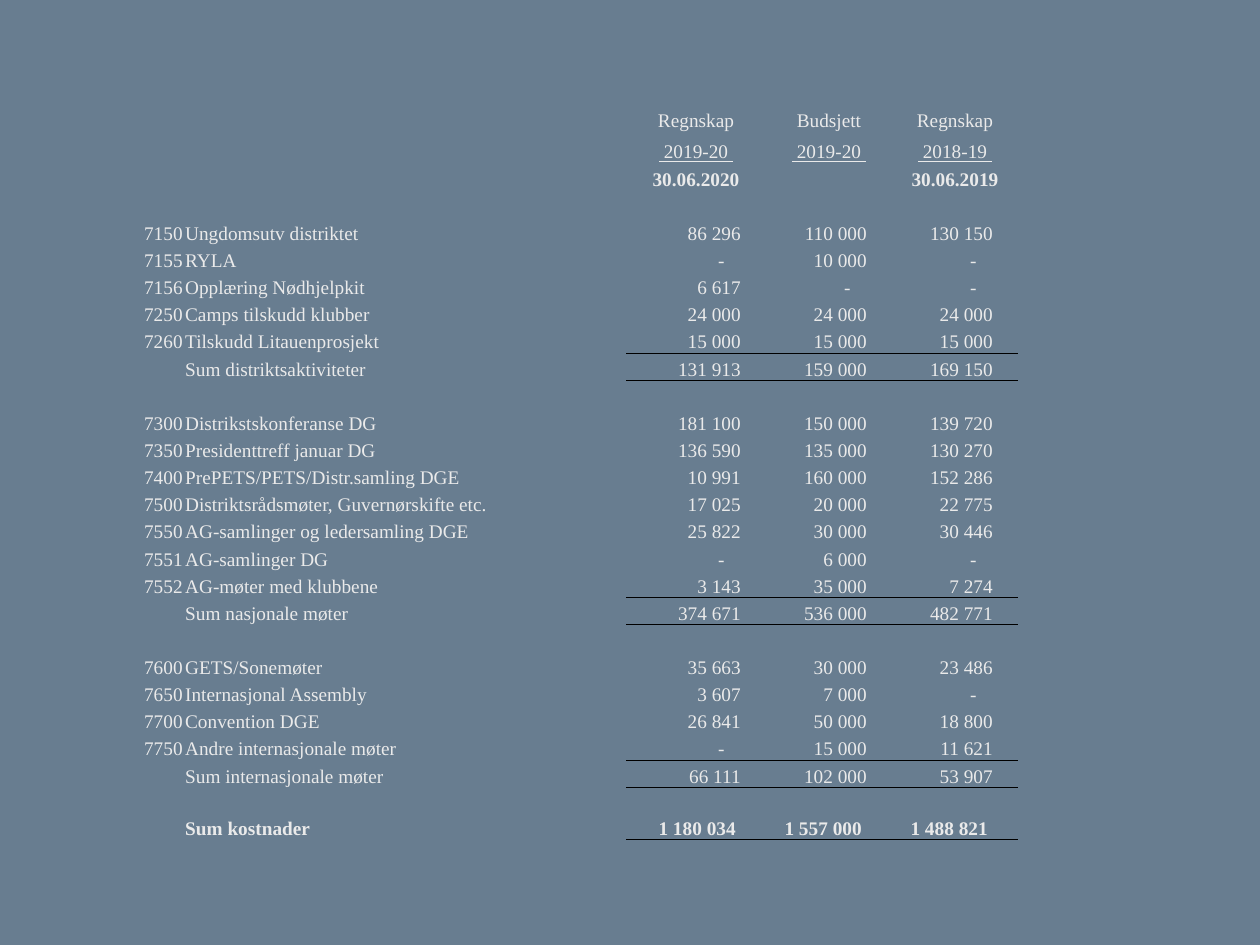
from typing import NamedTuple

from lxml import etree
from pptx import Presentation
from pptx.dml.color import RGBColor
from pptx.enum import text
from pptx.oxml.ns import qn
from pptx.util import Inches, Pt

BACKGROUND = RGBColor(0x68, 0x7D, 0x90)
INK = RGBColor(0xEA, 0xEA, 0xEA)
RULE = RGBColor(0, 0, 0)
FONT = "Times New Roman"
LEFT, CENTER, RIGHT = text.PP_ALIGN.LEFT, text.PP_ALIGN.CENTER, text.PP_ALIGN.RIGHT

COL_WIDTHS = [0.48, 2.87, 0.64, 1.11, 1, 1]
FIRST_VALUE_COL = 3
TABLE_HEIGHT, PERIOD_HEIGHT, TOTAL_HEIGHT = 5.84, 0.25, 0.2
PERIOD_ROW = 1
PAD = 0.01
NUMBER_INDENT, DASH_INDENT, TOTAL_INDENT = 0.2, 0.33, 0.24


class Entry(NamedTuple):
    account: str
    label: str
    values: tuple[str, str, str]


class Section(NamedTuple):
    entries: list[Entry]
    total: Entry


HEADINGS = [
    (("Regnskap", "Budsjett", "Regnskap"), {}),
    ((" 2019-20 ", " 2019-20 ", " 2018-19 "), {"underline": True}),
    (("30.06.2020", "", "30.06.2019"), {"bold": True}),
]
SECTIONS = [
    Section([
        Entry("7150", "Ungdomsutv distriktet", ("86 296", "110 000", "130 150")),
        Entry("7155", "RYLA", ("-", "10 000", "-")),
        Entry("7156", "Opplæring Nødhjelpkit", ("6 617", "-", "-")),
        Entry("7250", "Camps tilskudd klubber", ("24 000", "24 000", "24 000")),
        Entry("7260", "Tilskudd Litauenprosjekt", ("15 000", "15 000", "15 000")),
    ], Entry("", "Sum distriktsaktiviteter", ("131 913", "159 000", "169 150"))),
    Section([
        Entry("7300", "Distrikstskonferanse DG", ("181 100", "150 000", "139 720")),
        Entry("7350", "Presidenttreff januar DG", ("136 590", "135 000", "130 270")),
        Entry("7400", "PrePETS/PETS/Distr.samling DGE", ("10 991", "160 000", "152 286")),
        Entry("7500", "Distriktsrådsmøter, Guvernørskifte etc.", ("17 025", "20 000", "22 775")),
        Entry("7550", "AG-samlinger og ledersamling DGE", ("25 822", "30 000", "30 446")),
        Entry("7551", "AG-samlinger DG", ("-", "6 000", "-")),
        Entry("7552", "AG-møter med klubbene", ("3 143", "35 000", "7 274")),
    ], Entry("", "Sum nasjonale møter", ("374 671", "536 000", "482 771"))),
    Section([
        Entry("7600", "GETS/Sonemøter", ("35 663", "30 000", "23 486")),
        Entry("7650", "Internasjonal Assembly", ("3 607", "7 000", "-")),
        Entry("7700", "Convention DGE", ("26 841", "50 000", "18 800")),
        Entry("7750", "Andre internasjonale møter", ("-", "15 000", "11 621")),
    ], Entry("", "Sum internasjonale møter", ("66 111", "102 000", "53 907"))),
]
GRAND_TOTAL = Entry("", "Sum kostnader", ("1 180 034", "1 557 000", "1 488 821"))


def prepare_cell(cell) -> None:
    """Clear the fill, tighten the margins and keep empty lines small."""
    cell.fill.background()
    cell.vertical_anchor = text.MSO_ANCHOR.BOTTOM
    cell.margin_left = cell.margin_right = cell.margin_top = Inches(PAD)
    cell.margin_bottom = 0
    end = etree.SubElement(cell.text_frame.paragraphs[0]._p, qn("a:endParaRPr"))
    end.set("sz", "1100")


def write_cell(cell, content: str, align, indent: float = PAD, **extra) -> None:
    if not content:
        return
    cell.margin_right = Inches(indent)
    p = cell.text_frame.paragraphs[0]
    p.alignment = align
    r = p.add_run()
    r.text = content
    for name, value in {"name": FONT, "size": Pt(11), **extra}.items():
        setattr(r.font, name, value)
    r.font.color.rgb = INK


def rule_below(cell) -> None:
    ln = etree.Element(qn("a:lnB"), w=str(Pt(0.5)))
    fill = etree.SubElement(ln, qn("a:solidFill"))
    etree.SubElement(fill, qn("a:srgbClr"), val=str(RULE))
    cell._tc.get_or_add_tcPr().insert(0, ln)


def write_entry(table, row: int, entry: Entry, ruled: bool, bold: bool = False) -> None:
    write_cell(table.cell(row, 0), entry.account, RIGHT)
    write_cell(table.cell(row, 1), entry.label, LEFT, bold=bold)
    for col, value in enumerate(entry.values, FIRST_VALUE_COL):
        indent = DASH_INDENT if value == "-" else TOTAL_INDENT if bold else NUMBER_INDENT
        write_cell(table.cell(row, col), value, RIGHT, indent, bold=bold)
        if ruled:
            rule_below(table.cell(row, col))


def add_accounts_table(s):
    rows = len(HEADINGS) + sum(len(sec.entries) + 2 for sec in SECTIONS) + 2
    table = s.shapes.add_table(rows, len(COL_WIDTHS), Inches(0.98), Inches(0.83),
                               Inches(sum(COL_WIDTHS)), Inches(TABLE_HEIGHT)).table
    table.first_row = table.horz_banding = False
    # "No Style, No Grid"
    table._tbl.tblPr.find(qn("a:tableStyleId")).text = "{2D5ABB26-0587-4C30-8999-92F81FD0307C}"
    for column, width in zip(table.columns, COL_WIDTHS):
        column.width = Inches(width)
    regular = (TABLE_HEIGHT - PERIOD_HEIGHT - TOTAL_HEIGHT) / (rows - 2)
    special = {PERIOD_ROW: PERIOD_HEIGHT, rows - 1: TOTAL_HEIGHT}
    for i, row in enumerate(table.rows):
        row.height = Inches(special.get(i, regular))
    for cell in table.iter_cells():
        prepare_cell(cell)
    return table


def main() -> None:
    prs = Presentation()
    prs.slide_width, prs.slide_height = Inches(10), Inches(7.5)
    s = prs.slides.add_slide(prs.slide_layouts[6])
    s.background.fill.solid()
    s.background.fill.fore_color.rgb = BACKGROUND

    table = add_accounts_table(s)
    for row, (labels, style) in enumerate(HEADINGS):
        for col, label in enumerate(labels, FIRST_VALUE_COL):
            write_cell(table.cell(row, col), label, CENTER, **style)

    row = len(HEADINGS) + 1
    for section in SECTIONS:
        for entry in section.entries:
            write_entry(table, row, entry, ruled=entry is section.entries[-1])
            row += 1
        write_entry(table, row, section.total, ruled=True)
        row += 2
    write_entry(table, row, GRAND_TOTAL, ruled=True, bold=True)

    prs.save("out.pptx")


if __name__ == "__main__":
    main()
